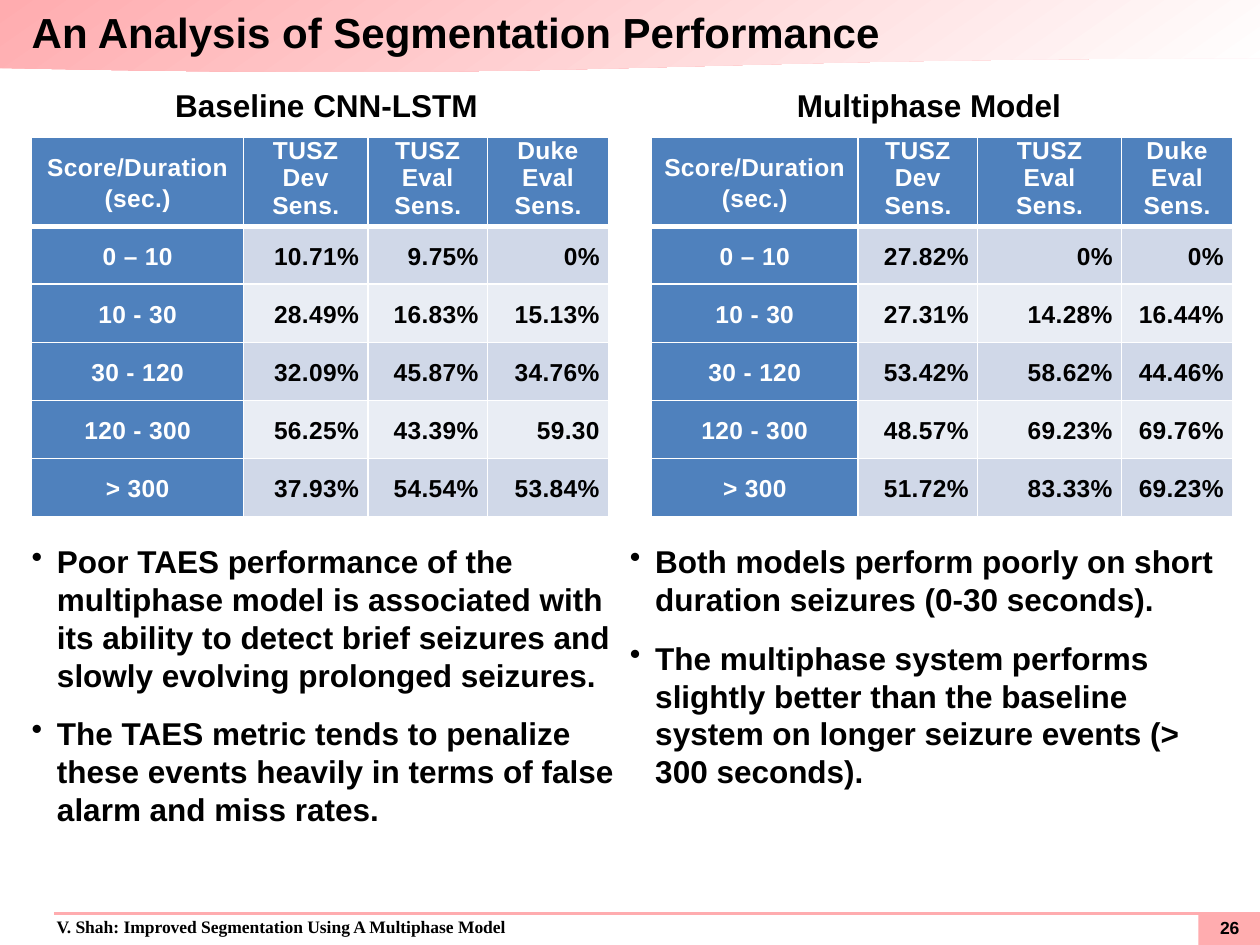
from dataclasses import dataclass

from lxml import etree
from pptx import Presentation
from pptx import util as u
from pptx.dml.color import RGBColor
from pptx.enum import shapes, text
from pptx.oxml.ns import qn

Cm, Pt = u.Cm, u.Pt
ALIGN, ANCHOR = text.PP_ALIGN, text.MSO_ANCHOR


@dataclass(frozen=True)
class Theme:
    font: str = "Arial"
    footer_font: str = "Times New Roman"
    ink: str = "000000"
    white: str = "FFFFFF"
    pink: str = "FFACAF"
    header: str = "4F81BD"
    bands: tuple = ("D0D8E8", "E9EDF4")
    title: int = 24
    body: int = 18
    cell: int = 14
    small: int = 10


T = Theme()
HEADERS = ["Score/Duration (sec.)", "TUSZ\nDev\nSens.", "TUSZ\nEval\nSens.", "Duke\nEval\nSens."]
DURATIONS = ["0 – 10", "10 - 30", "30 - 120", "120 - 300", "> 300"]
BASELINE = [
    ["10.71%", "9.75%", "0%"],
    ["28.49%", "16.83%", "15.13%"],
    ["32.09%", "45.87%", "34.76%"],
    ["56.25%", "43.39%", "59.30"],
    ["37.93%", "54.54%", "53.84%"],
]
MULTIPHASE = [
    ["27.82%", "0%", "0%"],
    ["27.31%", "14.28%", "16.44%"],
    ["53.42%", "58.62%", "44.46%"],
    ["48.57%", "69.23%", "69.76%"],
    ["51.72%", "83.33%", "69.23%"],
]
BASELINE_NOTES = [
    "Poor TAES performance of the multiphase model is associated with its ability "
    "to detect brief seizures and slowly evolving prolonged seizures.",
    "The TAES metric tends to penalize these events heavily in terms of false alarm and miss rates.",
]
MULTIPHASE_NOTES = [
    "Both models perform poorly on short duration seizures (0-30 seconds).",
    "The multiphase system performs slightly better than the baseline system "
    "on longer seizure events (> 300 seconds).",
]


def rgb(value):
    return RGBColor.from_string(value)


def add_run(p, words, size, color=T.ink, font=T.font):
    r = p.add_run()
    r.text = words
    r.font.size, r.font.name, r.font.bold = Pt(size), font, True
    r.font.color.rgb = rgb(color)
    return r


def set_frame(tf, inset=(0, 0), anchor=ANCHOR.TOP, wrap=True):
    tf.margin_left = tf.margin_right = Cm(inset[0])
    tf.margin_top = tf.margin_bottom = Cm(inset[1])
    tf.vertical_anchor, tf.word_wrap = anchor, wrap
    return tf


def add_text(slide, x, y, w, h, **frame):
    return set_frame(slide.shapes.add_textbox(Cm(x), Cm(y), Cm(w), Cm(h)).text_frame, **frame)


def add_block(slide, kind, x, y, w, h):
    sp = slide.shapes.add_shape(kind, Cm(x), Cm(y), Cm(w), Cm(h))
    sp.shadow.inherit = False
    sp.line.fill.background()
    return sp


def add_title(slide, x, y, w, h, words):
    """Draw the banner and lay the title placeholder over it."""
    banner = add_block(slide, shapes.MSO_SHAPE.FLOWCHART_DOCUMENT, 0, 0, 25.4, 1.47)
    banner.fill.gradient()
    banner.fill.gradient_angle = 305
    for stop, color in zip(banner.fill.gradient_stops, (T.pink, T.white)):
        stop.color.rgb = rgb(color)

    title = slide.shapes.title
    slide.shapes._spTree.append(title._element)
    title.left, title.top, title.width, title.height = Cm(x), Cm(y), Cm(w), Cm(h)
    p = set_frame(title.text_frame, anchor=ANCHOR.MIDDLE).paragraphs[0]
    p.alignment = ALIGN.LEFT
    add_run(p, words, T.title)


def add_footer(slide, y, words, number):
    tag = add_block(slide, shapes.MSO_SHAPE.RECTANGLE, 24.16, y, 1.24, 0.66)
    tag.fill.solid()
    tag.fill.fore_color.rgb = rgb(T.pink)

    p = add_text(slide, 0.1, y - 0.02, 23, 0.66, inset=(0.25, 0.13)).paragraphs[0]
    p._p.get_or_add_pPr().set("marL", str(Cm(0.79)))
    p.line_spacing = 0.95
    add_run(p, words, T.small, font=T.footer_font)

    rule = slide.shapes.add_connector(
        shapes.MSO_CONNECTOR.STRAIGHT, Cm(1.09), Cm(y + 0.02), Cm(25.4), Cm(y + 0.02))
    rule.line.color.rgb, rule.line.width = rgb(T.pink), Pt(1.5)
    etree.SubElement(rule._element.spPr, qn("a:effectLst"))

    p = add_text(slide, 24.28, y + 0.1, 1.02, 0.43, anchor=ANCHOR.MIDDLE).paragraphs[0]
    p.alignment = ALIGN.CENTER
    add_run(p, number, T.small)


def set_borders(cell, top, bottom):
    tc_pr = cell._tc.get_or_add_tcPr()
    for side, width in (("L", 1), ("R", 1), ("T", top), ("B", bottom)):
        ln = etree.SubElement(tc_pr, qn(f"a:ln{side}"), w=str(Pt(width)))
        fill = etree.SubElement(ln, qn("a:solidFill"))
        etree.SubElement(fill, qn("a:srgbClr"), val=T.white)


def fill_cell(cell, words, row, col):
    is_label = row == 0 or col == 0
    stacked = row == 0 and col > 0
    set_borders(cell, 3 if row == 1 else 1, 3 if row == 0 else 1)
    cell.fill.solid()
    cell.fill.fore_color.rgb = rgb(T.header if is_label else T.bands[(row - 1) % 2])
    cell.margin_left = cell.margin_right = Cm(0.18)
    cell.margin_top = cell.margin_bottom = 0
    cell.vertical_anchor = ANCHOR.TOP if stacked else ANCHOR.MIDDLE
    p = cell.text_frame.paragraphs[0]
    p.alignment = ALIGN.CENTER if is_label else ALIGN.RIGHT
    if not stacked:
        p.line_spacing = 1.15
    if row > 0:
        p.space_after = Pt(10)
    for i, line in enumerate(words.split("\n")):
        if i:
            p.add_line_break()
        r = add_run(p, line, T.cell, T.white if is_label else T.ink)
        r.font._element.set("spc", "20")
    for br in p._p.findall(qn("a:br")):
        etree.SubElement(br, qn("a:rPr"), sz=str(T.cell * 100), b="1")


def add_scores(slide, x, y, widths, scores):
    rows = [HEADERS] + [[label, *values] for label, values in zip(DURATIONS, scores)]
    table = slide.shapes.add_table(
        len(rows), len(HEADERS), Cm(x), Cm(y), Cm(sum(widths)), Cm(7.62)).table
    for column, width in zip(table.columns, widths):
        column.width = Cm(width)
    for i, row in enumerate(rows):
        table.rows[i].height = Cm(1.17 if i else 1.8)
        for j, words in enumerate(row):
            fill_cell(table.cell(i, j), words, i, j)


def add_bullets(slide, x, y, w, h, items):
    tf = add_text(slide, x, y, w, h)
    for i, item in enumerate(items):
        p = tf.add_paragraph() if i else tf.paragraphs[0]
        p_pr = p._p.get_or_add_pPr()
        p_pr.set("marL", str(Cm(0.51)))
        p_pr.set("indent", str(-Cm(0.51)))
        etree.SubElement(p_pr, qn("a:buChar"), char="•")
        p.space_after = Pt(12)
        add_run(p, item, T.body)


def add_model(slide, x, y, w, heading, table_inset, widths, scores, notes):
    """Stack a heading, a score table and its notes in one column."""
    p = add_text(slide, x, y, w, 0.84, anchor=ANCHOR.MIDDLE, wrap=False).paragraphs[0]
    p.alignment = ALIGN.CENTER
    add_run(p, heading, T.body)
    add_scores(slide, x + table_inset, y + 1.06, widths, scores)
    add_bullets(slide, x, y + 9.23, w, 6.4, notes)


def main():
    prs = Presentation()
    prs.slide_width, prs.slide_height = Cm(25.4), Cm(19.05)
    slide = prs.slides.add_slide(prs.slide_layouts[5])
    add_title(slide, 0.64, 0, 24.13, 1.27, "An Analysis of Segmentation Performance")
    add_footer(slide, 18.39, "V. Shah: Improved Segmentation Using A Multiphase Model", "26")
    add_model(slide, 0.64, 1.7, 12.06, "Baseline CNN-LSTM ", 0,
              (4.27, 2.51, 2.41, 2.44), BASELINE, BASELINE_NOTES)
    add_model(slide, 12.7, 1.7, 12.06, "Multiphase Model", 0.43,
              (4.17, 2.41, 2.9, 2.24), MULTIPHASE, MULTIPHASE_NOTES)
    prs.save("out.pptx")


if __name__ == "__main__":
    main()
